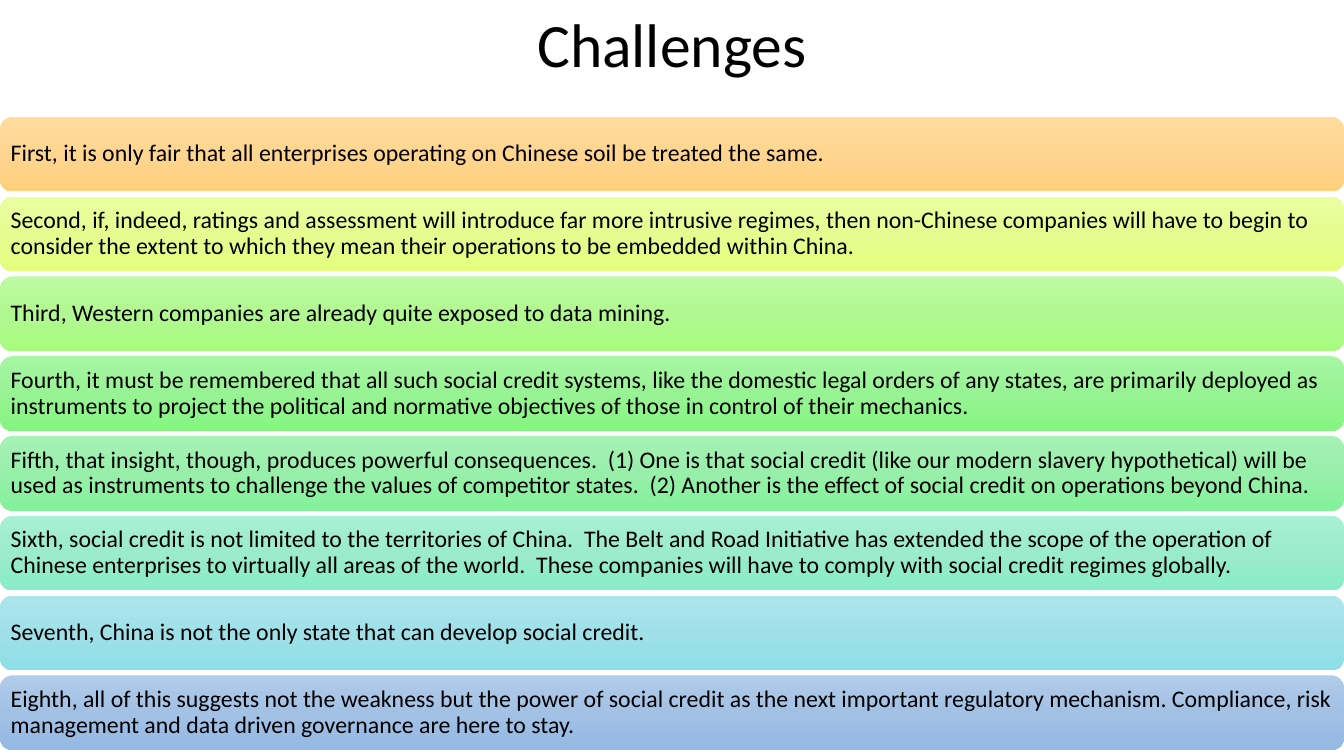
from copy import deepcopy

from pptx import Presentation
from pptx.dml.color import RGBColor
from pptx.enum.shapes import MSO_SHAPE
from pptx.enum.text import MSO_ANCHOR, PP_ALIGN
from pptx.oxml.ns import qn
from pptx.util import Inches, Pt

# Content: each challenge with the top, middle and bottom colour of its bar
TITLE = "Challenges"
CHALLENGES = [
    ("First, it is only fair that all enterprises operating on Chinese soil be treated the same.",
     ("FFDB9E", "FFD590", "FFD07C")),
    ("Second, if, indeed, ratings and assessment will introduce far more intrusive regimes, then "
     "non-Chinese companies will have to begin to consider the extent to which they mean their "
     "operations to be embedded within China.",
     ("EAFE9F", "E6FC91", "E4FF7D")),
    ("Third, Western companies are already quite exposed to data mining.",
     ("BDFAA1", "B2F892", "A7FC7E")),
    ("Fourth, it must be remembered that all such social credit systems, like the domestic legal "
     "orders of any states, are primarily deployed as instruments to project the political and "
     "normative objectives of those in control of their mechanics.",
     ("A6F6A3", "98F394", "84F680")),
    ("Fifth, that insight, though, produces powerful consequences.  (1) One is that social credit "
     "(like our modern slavery hypothetical) will be used as instruments to challenge the values "
     "of competitor states.  (2) Another is the effect of social credit on operations beyond China.",
     ("A6F2B6", "97EFA9", "84F19B")),
    ("Sixth, social credit is not limited to the territories of China.  The Belt and Road "
     "Initiative has extended the scope of the operation of Chinese enterprises to virtually all "
     "areas of the world.  These companies will have to comply with social credit regimes globally.",
     ("A9EFD5", "9BEBCD", "88ECC8")),
    ("Seventh, China is not the only state that can develop social credit.",
     ("ADE5EC", "9FE0E8", "8DDFE8")),
    ("Eighth, all of this suggests not the weakness but the power of social credit as the next "
     "important regulatory mechanism. Compliance, risk management and data driven governance are "
     "here to stay.",
     ("B1CBE9", "A3C1E5", "93B9E4")),
]

FONT = "Calibri"
BLACK = RGBColor(0, 0, 0)

# Layout in inches
PAGE_WIDTH, PAGE_HEIGHT = 13.33, 7.5
TITLE_WIDTH, TITLE_HEIGHT = 11.5, 0.95
FIRST_TOP, LAST_TOP, BAR_HEIGHT = 1.16, 6.7, 0.74
ROW_STEP = (LAST_TOP - FIRST_TOP) / (len(CHALLENGES) - 1)


def write(box, text, size, align=PP_ALIGN.LEFT, inset=0.07):
    frame = box.text_frame
    frame.word_wrap = True
    frame.vertical_anchor = MSO_ANCHOR.MIDDLE
    frame.margin_left = frame.margin_right = Inches(inset)
    frame.margin_top = frame.margin_bottom = Inches(inset)
    para = frame.paragraphs[0]
    para.alignment = align
    para.line_spacing = 0.9
    span = para.add_run()
    span.text = text
    span.font.name = FONT
    span.font.size = Pt(size)
    span.font.color.rgb = BLACK


def shade(bar, colours):
    """Fill a bar from top to bottom with evenly spaced colours."""
    bar.fill.gradient()
    bar.fill.gradient_angle = 270
    stop_list = bar._element.spPr.find(qn("a:gradFill")).find(qn("a:gsLst"))
    while len(stop_list) < len(colours):
        stop_list.append(deepcopy(stop_list[0]))
    for index, (stop, colour) in enumerate(zip(bar.fill.gradient_stops, colours)):
        stop.position = index / (len(colours) - 1)
        stop.color.rgb = RGBColor.from_string(colour)


deck = Presentation()
deck.slide_width, deck.slide_height = Inches(PAGE_WIDTH), Inches(PAGE_HEIGHT)
page = deck.slides.add_slide(deck.slide_layouts[6])

# Title
title = page.shapes.add_textbox(Inches((PAGE_WIDTH - TITLE_WIDTH) / 2), 0,
                                Inches(TITLE_WIDTH), Inches(TITLE_HEIGHT))
write(title, TITLE, size=44, align=PP_ALIGN.CENTER, inset=0.05)

# Stack of full-width bars
for row, (text, colours) in enumerate(CHALLENGES):
    bar = page.shapes.add_shape(MSO_SHAPE.ROUNDED_RECTANGLE, 0,
                                Inches(FIRST_TOP + row * ROW_STEP),
                                Inches(PAGE_WIDTH), Inches(BAR_HEIGHT))
    bar.shadow.inherit = False
    bar.line.fill.background()
    shade(bar, colours)
    write(bar, text, size=17)

deck.save("out.pptx")
